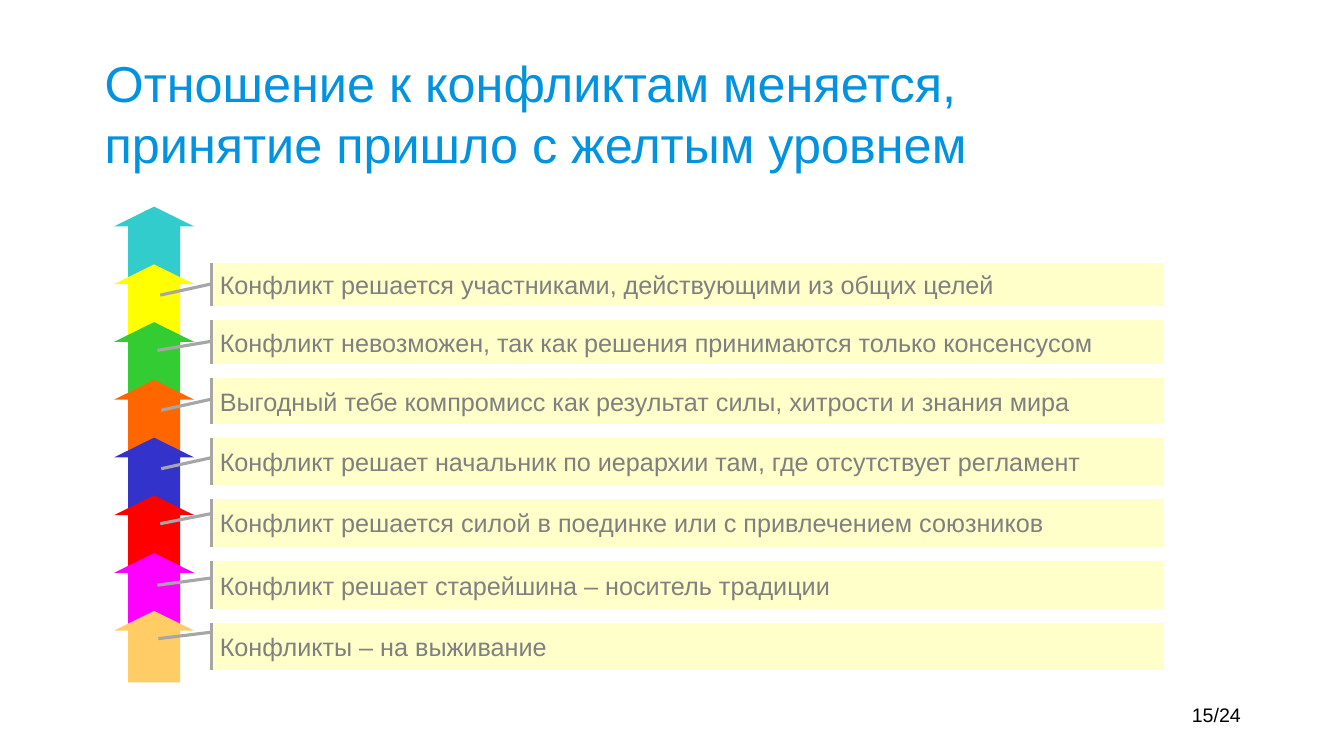
from pptx import Presentation
from pptx.dml.color import RGBColor
from pptx.enum import shapes, text
from pptx.util import Pt

COLORS = {
    "title": "0293E0", "text": "808080", "page": "000000",
    "panel": "FFFFCA", "line": "A6A6A6",
    "turquoise": "33CCCC", "yellow": "FFFF00", "green": "33CC33",
    "orange": "FF6600", "blue": "3333CC", "red": "FF0000",
    "magenta": "FF00FF", "beige": "FFCC66",
}
LEVELS = ["turquoise", "yellow", "green", "orange",
          "blue", "red", "magenta", "beige"]
ARROW_STEP = 41.25
CALLOUT_GAP = 10

# Text, height, then the pointer's start y, end y and end x as shares of the box
ATTITUDES = [
    ("Конфликт решается участниками, действующими из общих целей",
     31, 0.48, 0.74, -0.054),
    ("Конфликт невозможен, так как решения принимаются только консенсусом",
     31, 0.48, 0.69, -0.057),
    ("Выгодный тебе компромисс как результат силы, хитрости и знания мира",
     33.1, 0.46, 0.7, -0.053),
    ("Конфликт решает начальник по иерархии там, где отсутствует регламент",
     33.1, 0.42, 0.66, -0.053),
    ("Конфликт решается силой в поединке или с привлечением союзников",
     34.6, 0.31, 0.52, -0.054),
    ("Конфликт решает старейшина – носитель традиции",
     34.6, 0.35, 0.5, -0.057),
    ("Конфликты – на выживание",
     33.1, 0.19, 0.33, -0.056),
]


def color(name):
    return RGBColor.from_string(COLORS[name])


def write(shape, content, *, size, fill, align=text.PP_ALIGN.LEFT,
          anchor=text.MSO_ANCHOR.TOP, margins=(7.2, 3.6), spacing=None):
    frame = shape.text_frame
    frame.word_wrap = True
    frame.vertical_anchor = anchor
    frame.margin_left = frame.margin_right = Pt(margins[0])
    frame.margin_top = frame.margin_bottom = Pt(margins[1])
    paragraph = frame.paragraphs[0]
    paragraph.text = content
    paragraph.alignment = align
    if spacing:
        paragraph.line_spacing = spacing
    for run in paragraph.runs:
        run.font.name = "Arial"
        run.font.size = Pt(size)
        run.font.color.rgb = color(fill)


class SlideBuilder:
    def __init__(self, slide):
        self.slide = slide

    def label(self, content, left, top, width, height, **style):
        box = self.slide.shapes.add_textbox(
            Pt(left), Pt(top), Pt(width), Pt(height))
        write(box, content, **style)

    def shape(self, kind, left, top, width, height, fill, adjustments):
        shape = self.slide.shapes.add_shape(
            kind, Pt(left), Pt(top), Pt(width), Pt(height))
        shape.shadow.inherit = False
        shape.fill.solid()
        shape.fill.fore_color.rgb = color(fill)
        for index, value in enumerate(adjustments):
            shape.adjustments[index] = value
        return shape

    def arrow(self, top, fill):
        arrow = self.shape(shapes.MSO_SHAPE.UP_ARROW, 81.6, top, 56.9, 51.1,
                           fill, (0.654, 0.275))
        arrow.line.fill.background()

    def callout(self, content, top, height, start_y, end_y, end_x):
        callout = self.shape(shapes.MSO_SHAPE.LINE_CALLOUT_1_ACCENT_BAR,
                             151.2, top, 680.4, height, "panel",
                             (start_y, 0, end_y, end_x))
        callout.line.color.rgb = color("line")
        callout.line.width = Pt(2.25)
        write(callout, content, size=18, fill="text",
              anchor=text.MSO_ANCHOR.MIDDLE, margins=(5.8, 1.4))


def main():
    presentation = Presentation()
    presentation.slide_width = Pt(960)
    presentation.slide_height = Pt(540)
    builder = SlideBuilder(
        presentation.slides.add_slide(presentation.slide_layouts[6]))

    builder.label("Отношение к конфликтам меняется,\n"
                  "принятие пришло с желтым уровнем",
                  67.7, 33.8, 854.6, 54, size=36, fill="title")
    for index, level in enumerate(LEVELS):
        builder.arrow(147.6 + index * ARROW_STEP, level)
    top = 187.9
    for content, height, *pointer in ATTITUDES:
        builder.callout(content, top, height, *pointer)
        top += height + CALLOUT_GAP
    builder.label("15/24", 789.8, 501.8, 103.7, 20.9, size=14, fill="page",
                  align=text.PP_ALIGN.RIGHT, anchor=text.MSO_ANCHOR.BOTTOM)

    presentation.save("out.pptx")


if __name__ == "__main__":
    main()
